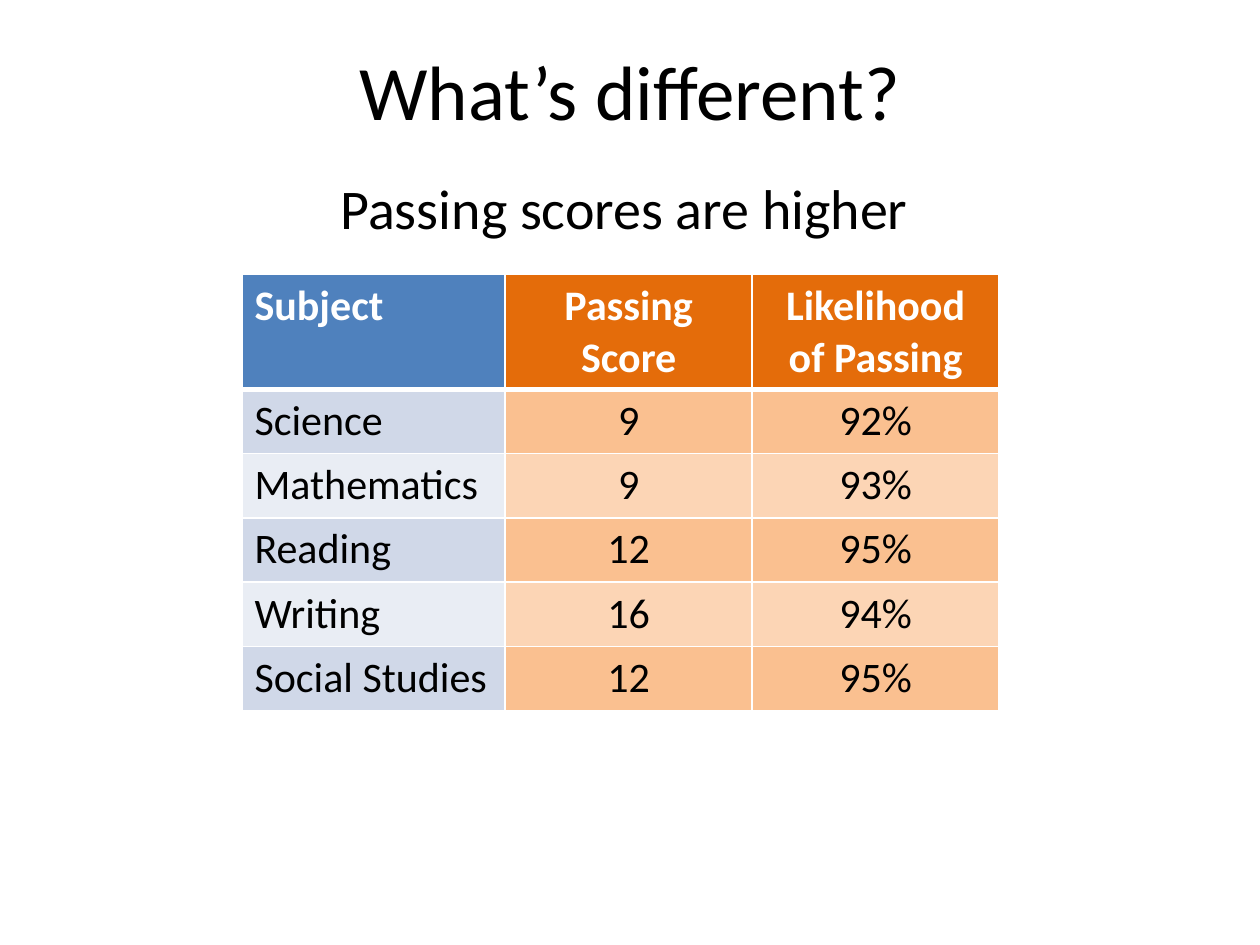
from dataclasses import dataclass

from lxml.etree import SubElement
from pptx import Presentation
from pptx.dml.color import RGBColor
from pptx.enum.text import PP_ALIGN
from pptx.oxml.ns import qn
from pptx.util import Inches, Pt

COLORS = {
    "text": "000000",
    "white": "FFFFFF",
    "subject_header": "4F81BD",
    "score_header": "E46C0A",
    "subject_dark": "D0D8E8",
    "subject_light": "E9EDF4",
    "score_dark": "FAC090",
    "score_light": "FCD5B5",
}
COLUMN_WIDTHS = (2.09, 1.96, 1.96)
HEADER_HEIGHT, ROW_HEIGHT = 0.91, 0.51
HEADER = ("Subject", "Passing Score", "Likelihood of Passing")


@dataclass
class Heading:
    text: str
    left: float
    top: float
    width: float
    height: float
    size: int


@dataclass
class Result:
    subject: str
    score: int
    likelihood: str


HEADINGS = (
    Heading("What’s different?", 0.5, 0.3, 9, 1.25, 44),
    Heading("Passing scores are higher", 1.83, 1.33, 6.25, 0.75, 32),
)
RESULTS = (
    Result("Science", 9, "92%"),
    Result("Mathematics", 9, "93%"),
    Result("Reading", 12, "95%"),
    Result("Writing", 16, "94%"),
    Result("Social Studies", 12, "95%"),
)


def write(frame, text: str, size: int, color: str, align, bold: bool = False) -> None:
    paragraph = frame.paragraphs[0]
    paragraph.alignment = align
    run = paragraph.add_run()
    run.text = text
    style = {"name": "Calibri", "size": Pt(size), "bold": bold}
    for attribute, value in style.items():
        setattr(run.font, attribute, value)
    run.font.color.rgb = RGBColor.from_string(COLORS[color])


def add_heading(slide, heading: Heading) -> None:
    place = (heading.left, heading.top, heading.width, heading.height)
    frame = slide.shapes.add_textbox(*map(Inches, place)).text_frame
    frame.word_wrap = True
    write(frame, heading.text, heading.size, "text", PP_ALIGN.CENTER)


def add_borders(cell, widths: dict[str, int]) -> None:
    """Draw white cell borders; lines must come before the fill in the XML."""
    properties = cell._tc.get_or_add_tcPr()
    for side, width in widths.items():
        line = SubElement(properties, qn(f"a:{side}"), w=str(Pt(width)))
        fill = SubElement(line, qn("a:solidFill"))
        SubElement(fill, qn("a:srgbClr"), val=COLORS["white"])


def fill_cell(cell, text: str, row: int, column: int) -> None:
    is_header = row == 0
    shade = "header" if is_header else "dark" if row % 2 else "light"
    family = "score" if column else "subject"
    add_borders(cell, {
        "lnL": 1,
        "lnR": 1,
        "lnT": 3 if row == 1 else 1,
        "lnB": 3 if is_header else 1,
    })
    cell.fill.solid()
    cell.fill.fore_color.rgb = RGBColor.from_string(COLORS[f"{family}_{shade}"])
    write(cell.text_frame, text, 24, "white" if is_header else "text",
          PP_ALIGN.CENTER if column else PP_ALIGN.LEFT, bold=is_header)


def add_results(slide, results: tuple[Result, ...]) -> None:
    rows = [HEADER] + [(r.subject, str(r.score), r.likelihood) for r in results]
    height = HEADER_HEIGHT + ROW_HEIGHT * len(results)
    table = slide.shapes.add_table(
        len(rows), len(HEADER), Inches(1.92), Inches(2.18),
        Inches(sum(COLUMN_WIDTHS)), Inches(height)).table
    for column, width in zip(table.columns, COLUMN_WIDTHS):
        column.width = Inches(width)
    for i, values in enumerate(rows):
        table.rows[i].height = Inches(ROW_HEIGHT if i else HEADER_HEIGHT)
        for j, value in enumerate(values):
            fill_cell(table.cell(i, j), value, i, j)


def main() -> None:
    presentation = Presentation()
    presentation.slide_width, presentation.slide_height = Inches(10), Inches(7.5)
    slide = presentation.slides.add_slide(presentation.slide_layouts[6])

    # Title and subtitle
    for heading in HEADINGS:
        add_heading(slide, heading)

    # Passing scores by subject
    add_results(slide, RESULTS)
    presentation.save("out.pptx")


if __name__ == "__main__":
    main()
